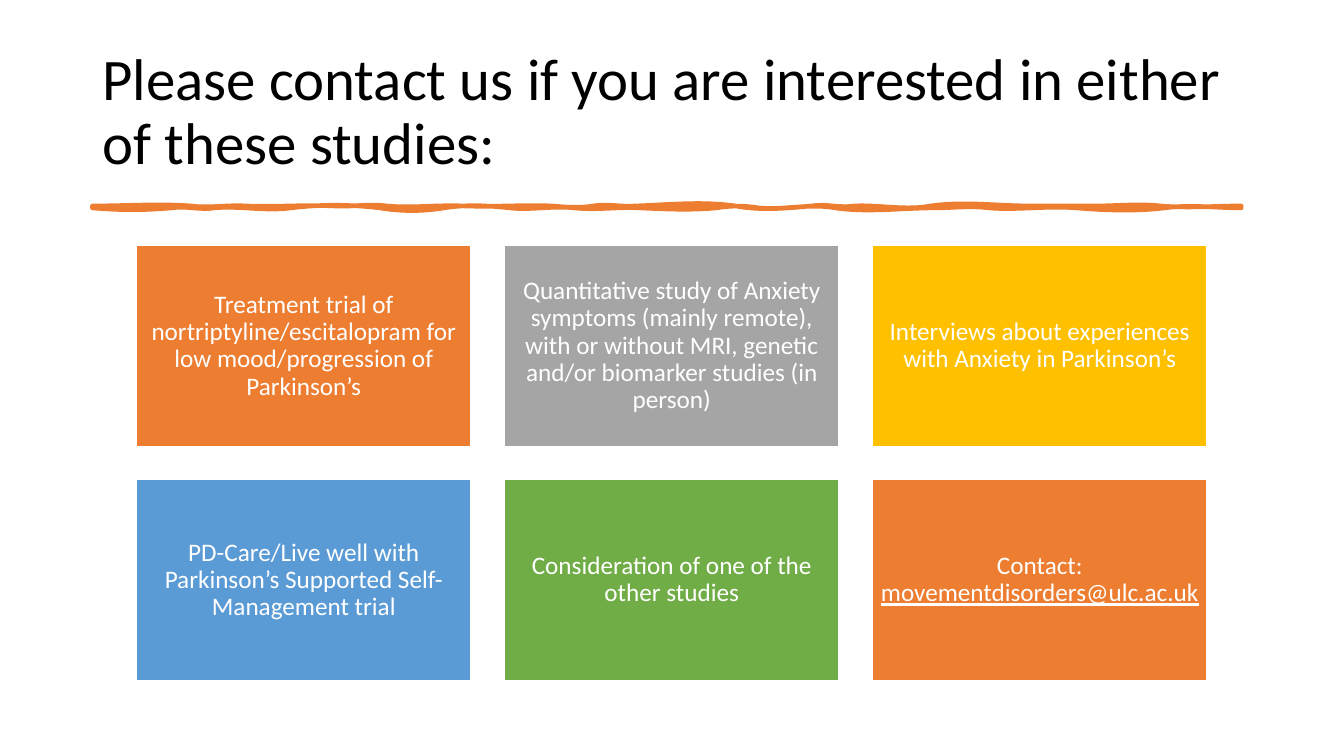
from lxml.etree import SubElement
from pptx import Presentation
from pptx.dml.color import RGBColor
from pptx.enum.shapes import MSO_SHAPE
from pptx.enum.text import MSO_ANCHOR, MSO_AUTO_SIZE, PP_ALIGN
from pptx.oxml.ns import qn
from pptx.util import Cm, Pt

BLACK = RGBColor(0, 0, 0)
WHITE = RGBColor(255, 255, 255)
ORANGE = RGBColor(0xED, 0x7D, 0x31)
GREY = RGBColor(0xA5, 0xA5, 0xA5)
GOLD = RGBColor(0xFF, 0xC0, 0x00)
BLUE = RGBColor(0x5B, 0x9B, 0xD5)
GREEN = RGBColor(0x70, 0xAD, 0x47)

TITLE = "Please contact us if you are interested in either of these studies:"
TILES = [
    (ORANGE, ["Treatment trial of nortriptyline/escitalopram for low mood/progression of Parkinson’s"]),
    (GREY, ["Quantitative study of Anxiety symptoms (mainly remote), with or without MRI, "
            "genetic and/or biomarker studies (in person)"]),
    (GOLD, ["Interviews about experiences with Anxiety in Parkinson’s"]),
    (BLUE, ["PD-Care/Live well with Parkinson’s Supported Self-Management trial"]),
    (GREEN, ["Consideration of one of the other studies"]),
    (ORANGE, ["Contact: ", "movementdisorders@ulc.ac.uk"]),
]

UPPER = [
    (2.49, 0, -2), (3.86, 2, -1), (6.07, 1, -1), (7.41, 1, -2),
    (9.34, 2, -1), (11.58, 1, -1), (12.62, 1, 2), (13.69, -2, 1),
    (16.2, -1, -4), (18.13, 4, 2), (19.2, -2, 2), (21.13, -1, 4),
    (23.64, -4, 0), (25.27, 0, 0), (26.92, 0, -2), (28.95, 2, 0),
]
LOWER = [
    (28.95, 0, 0), (27.02, 0, -3), (24.79, 3, 2), (22.58, -2, 2),
    (21.23, -2, 0), (18.72, 0, 4), (16.79, -4, 2), (15.72, -2, -2),
    (13.79, 2, 1), (12.14, -1, 2), (10.51, -2, 2), (8.86, -2, -3),
    (7.24, 3, 3), (5, -3, -3), (3.07, 3, -2), (2, 2, -2), (0, 2, 2),
]
BEND = Cm(0.03)


def add_title(slide, left, top, width, height):
    title = slide.shapes.title
    title.left, title.top, title.width, title.height = map(Cm, (left, top, width, height))
    frame = title.text_frame
    frame.text = TITLE
    frame.word_wrap = True
    frame.auto_size = MSO_AUTO_SIZE.NONE
    frame.vertical_anchor = MSO_ANCHOR.MIDDLE
    para = frame.paragraphs[0]
    para.alignment = PP_ALIGN.LEFT
    para.line_spacing = 0.9
    para.font.name = "Calibri"
    para.font.size = Pt(42)
    para.font.color.rgb = BLACK


def bend_line(line, start, end, y, bends):
    line.tag = qn("a:cubicBezTo")
    for child in list(line):
        line.remove(child)
    third = (end - start) / 3
    nodes = [(start + third, y + bends[0] * BEND), (end - third, y + bends[1] * BEND), (end, y)]
    for x, y in nodes:
        SubElement(line, qn("a:pt"), x=str(round(x)), y=str(round(y)))


def add_rule(slide, left, top, height):
    waves = [(x, 0, one, two) for x, one, two in UPPER]
    waves += [(x, height, one, two) for x, one, two in LOWER]
    pen = slide.shapes.build_freeform(Cm(left), Cm(top))
    pen.add_line_segments([(Cm(left + x), Cm(top + y)) for x, y, one, two in waves])
    rule = pen.convert_to_shape()
    start = 0
    for line, (x, y, *bends) in zip(list(rule.element.iter(qn("a:lnTo"))), waves):
        if x != start:
            bend_line(line, Cm(start), Cm(x), Cm(y), bends)
        start = x
    rule.shadow.inherit = False
    rule.fill.solid()
    rule.fill.fore_color.rgb = ORANGE
    rule.line.color.rgb = ORANGE
    rule.line.width = Pt(3.25)
    SubElement(rule.element.spPr.find(qn("a:ln")), qn("a:round"))


def add_tile(slide, left, top, width, height, color, texts):
    tile = slide.shapes.add_shape(MSO_SHAPE.RECTANGLE, *map(Cm, (left, top, width, height)))
    tile.shadow.inherit = False
    tile.fill.solid()
    tile.fill.fore_color.rgb = color
    tile.line.color.rgb = WHITE
    tile.line.width = Pt(1)
    frame = tile.text_frame
    frame.word_wrap = True
    frame.vertical_anchor = MSO_ANCHOR.MIDDLE
    frame.margin_left = frame.margin_right = Cm(0.18)
    frame.margin_top = frame.margin_bottom = Cm(0.18)
    para = frame.paragraphs[0]
    para.alignment = PP_ALIGN.CENTER
    para.line_spacing = 0.9
    para.font.name = "Calibri"
    para.font.size = Pt(18)
    para.font.color.rgb = WHITE
    for text in texts:
        run = para.add_run()
        run.text = text
        if "@" in text:
            run.font.underline = True


def add_grid(slide, left, top, width, height, cols=3, rows=2, gap=0.84):
    wide = (width - gap * (cols - 1)) / cols
    high = (height - gap * (rows - 1)) / rows
    for index, (color, texts) in enumerate(TILES):
        row, col = divmod(index, cols)
        add_tile(slide, left + col * (wide + gap), top + row * (high + gap),
                 wide, high, color, texts)


def main():
    deck = Presentation()
    deck.slide_width, deck.slide_height = Cm(33.87), Cm(19.05)
    slide = deck.slides.add_slide(deck.slide_layouts[5])
    add_title(slide, 2.33, 1.02, 29.21, 3.68)
    add_rule(slide, 2.33, 5.19, 0.05)
    add_grid(slide, 3.44, 6.19, 26.98, 10.96)
    deck.save("out.pptx")


if __name__ == "__main__":
    main()
